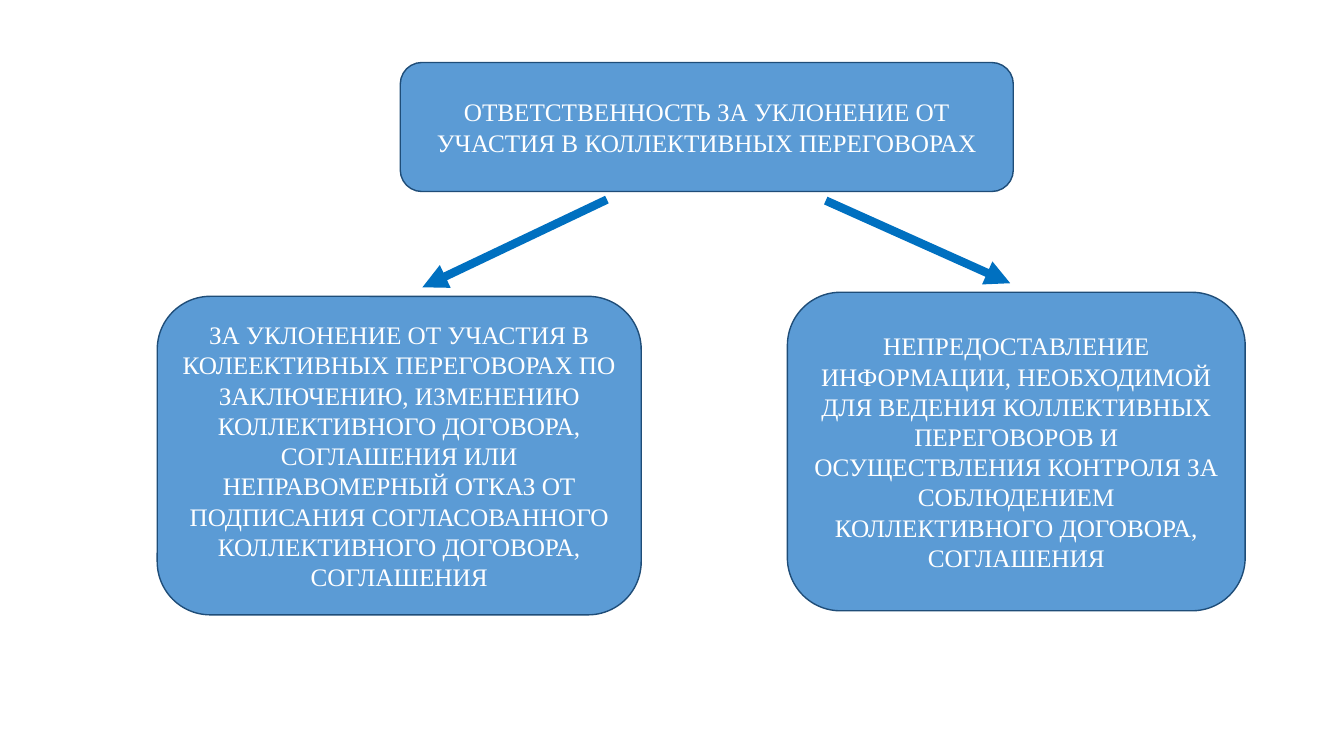
from lxml import etree
from pptx import Presentation
from pptx.dml.color import RGBColor
from pptx.enum.shapes import MSO_CONNECTOR, MSO_SHAPE
from pptx.enum.text import MSO_ANCHOR, PP_ALIGN
from pptx.oxml.ns import qn
from pptx.util import Pt

ROUNDED = MSO_SHAPE.ROUNDED_RECTANGLE
STRAIGHT = MSO_CONNECTOR.STRAIGHT
MIDDLE = MSO_ANCHOR.MIDDLE
CENTER = PP_ALIGN.CENTER

EMU_PER_PX = 9144
FONT = "Times New Roman"
COLORS = {"box": "5B9BD5", "border": "1F4D78", "arrow": "0070C0", "text": "FFFFFF"}

BOXES = [
    ((397, 62, 608, 128),
     "ОТВЕТСТВЕННОСТЬ ЗА УКЛОНЕНИЕ ОТ УЧАСТИЯ В КОЛЛЕКТИВНЫХ ПЕРЕГОВОРАХ"),
    ((156, 294, 480, 316),
     "ЗА УКЛОНЕНИЕ ОТ УЧАСТИЯ В КОЛЕЕКТИВНЫХ ПЕРЕГОВОРАХ ПО ЗАКЛЮЧЕНИЮ, "
     "ИЗМЕНЕНИЮ КОЛЛЕКТИВНОГО ДОГОВОРА, СОГЛАШЕНИЯ ИЛИ НЕПРАВОМЕРНЫЙ ОТКАЗ ОТ "
     "ПОДПИСАНИЯ СОГЛАСОВАННОГО КОЛЛЕКТИВНОГО ДОГОВОРА, СОГЛАШЕНИЯ"),
    ((781, 290, 454, 316),
     "НЕПРЕДОСТАВЛЕНИЕ ИНФОРМАЦИИ, НЕОБХОДИМОЙ ДЛЯ ВЕДЕНИЯ КОЛЛЕКТИВНЫХ "
     "ПЕРЕГОВОРОВ И ОСУЩЕСТВЛЕНИЯ КОНТРОЛЯ ЗА СОБЛЮДЕНИЕМ КОЛЛЕКТИВНОГО "
     "ДОГОВОРА, СОГЛАШЕНИЯ"),
]
ARROWS = [(602, 198, 419, 285), (819, 199, 1002, 281)]


def px(n):
    return n * EMU_PER_PX


def color(name):
    return RGBColor.from_string(COLORS[name])


def add_box(s, place, text):
    sp = s.shapes.add_shape(ROUNDED, *map(px, place))
    sp.shadow.inherit = False
    sp.fill.solid()
    sp.fill.fore_color.rgb = color("box")
    sp.line.color.rgb = color("border")
    sp.line.width = Pt(1)
    tf = sp.text_frame
    tf.word_wrap = True
    tf.vertical_anchor = MIDDLE
    p = tf.paragraphs[0]
    p.alignment = CENTER
    r = p.add_run()
    r.text = text
    r.font.name = FONT
    r.font.size = Pt(18)
    r.font.color.rgb = color("text")


def add_arrow(s, ends):
    cxn = s.shapes.add_connector(STRAIGHT, *map(px, ends))
    cxn.line.color.rgb = color("arrow")
    cxn.line.width = Pt(6)
    etree.SubElement(cxn.line._get_or_add_ln(), qn("a:tailEnd"), type="triangle")
    etree.SubElement(cxn._element.spPr, qn("a:effectLst"))


def main():
    prs = Presentation()
    prs.slide_width, prs.slide_height = px(1333), px(750)
    s = prs.slides.add_slide(prs.slide_layouts[6])
    for place, text in BOXES:
        add_box(s, place, text)
    for ends in ARROWS:
        add_arrow(s, ends)
    prs.save("out.pptx")


if __name__ == "__main__":
    main()
